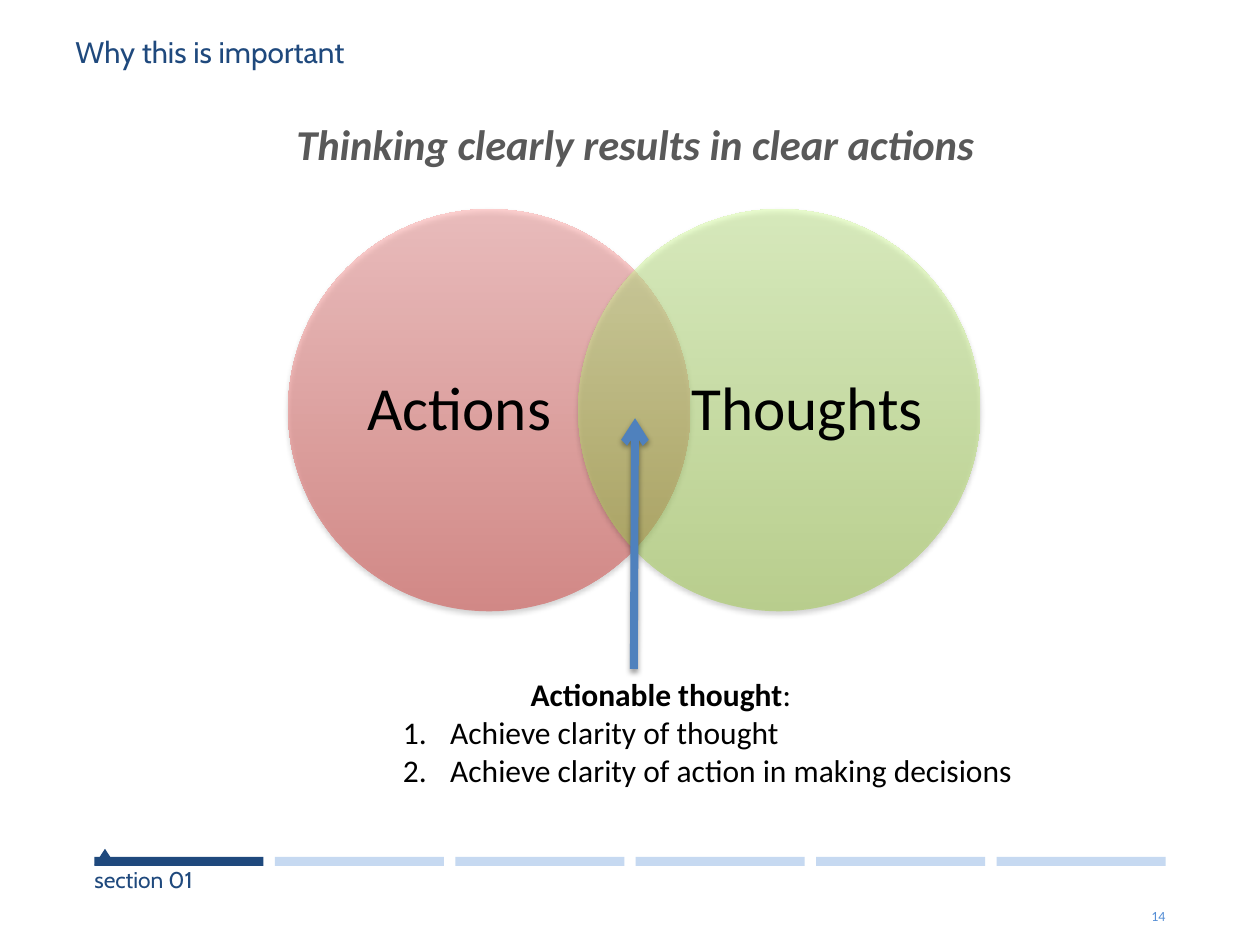
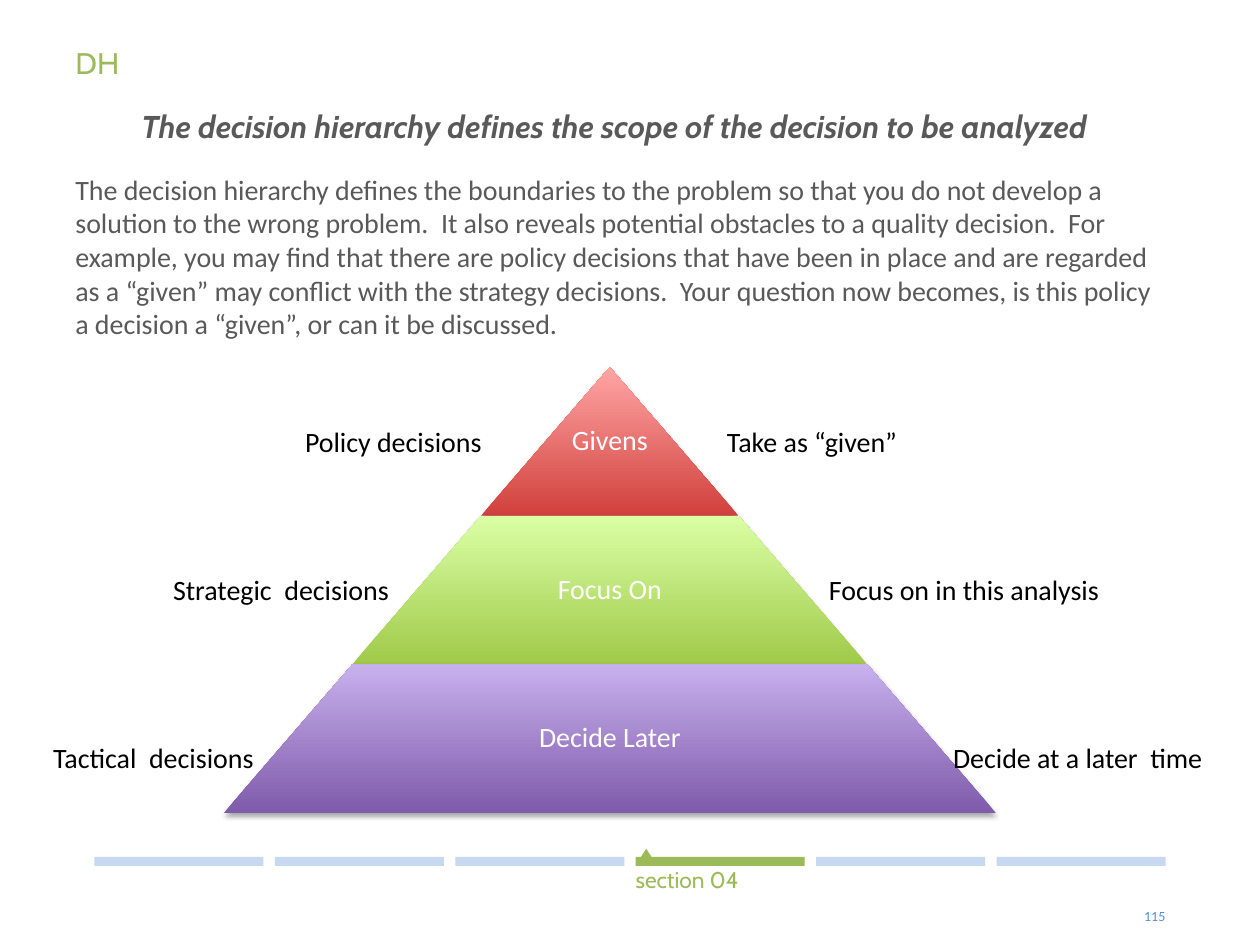
from lxml.etree import SubElement
from pptx import Presentation
from pptx.dml.color import RGBColor
from pptx.enum.shapes import MSO_CONNECTOR as Connector, MSO_SHAPE as Shape
from pptx.enum.text import MSO_ANCHOR as Anchor, PP_ALIGN as Align
from pptx.oxml.ns import qn
from pptx.util import Pt

NAVY, GREEN, PALE_BLUE = "1F497D", "9BBB59", "C6D9F1"
GREY, BLACK, WHITE = "595959", "000000", "FFFFFF"
RED_BLEND = ("D1403C", "FFA6A5")
GREEN_BLEND = ("A0CA4A", "DAFFA5")
PURPLE_BLEND = ("7F5BAB", "C8B0ED")

SECTIONS = 6
BAR_LEFT, BAR_TOP, BAR_WIDTH, BAR_HEIGHT, BAR_STEP = 54, 489.6, 96.6, 5.2, 103.1

KICKER = {"name": "Cabin", "size": Pt(17)}
SECTION = {"name": "Cabin", "size": Pt(13)}
HEADLINE = {"name": "Calibri", "size": Pt(24.3), "bold": True, "italic": True}
SUBHEAD = {"name": "Cabin", "size": Pt(18), "bold": True, "italic": True}
PAGE = {"name": "Calibri", "size": Pt(8)}
CIRCLE = {"name": "Calibri", "size": Pt(35)}
LIST = {"name": "Calibri", "size": Pt(18)}
PROSE = {"name": "Calibri", "size": Pt(16)}

TIGHT = {"margin_left": 0, "margin_right": 0, "margin_top": 0, "margin_bottom": 0}
MIDDLE = {"vertical_anchor": Anchor.MIDDLE}
CENTERED = {"alignment": Align.CENTER}
SQUEEZED = {"line_spacing": 0.85}


def rgb(color):
    return RGBColor.from_string(color)


def apply(target, values):
    for name, value in values.items():
        setattr(target, name, value)


def points(box):
    return [Pt(length) for length in box]


def write(paragraph, words, font, color, layout=None):
    apply(paragraph, layout or {})
    run = paragraph.add_run()
    run.text = words
    apply(run.font, font)
    run.font.color.rgb = rgb(color)


def add_text(slide, box, words, font, color, frame=None, layout=None):
    body = slide.shapes.add_textbox(*points(box)).text_frame
    body.word_wrap = True
    apply(body, frame or {})
    write(body.paragraphs[0], words, font, color, layout)
    return body


def add_shadow(properties, opacity, distance):
    effects = properties.find(qn("a:effectLst"))
    if effects is None:
        effects = SubElement(properties, qn("a:effectLst"))
    shade = SubElement(effects, qn("a:outerShdw"), blurRad=str(Pt(3.1)),
                       dist=str(Pt(distance)), dir="5400000", rotWithShape="0")
    black = SubElement(shade, qn("a:srgbClr"), val=BLACK)
    SubElement(black, qn("a:alpha"), val=str(opacity * 1000))


def paint(shape, color):
    shape.shadow.inherit = False
    shape.fill.solid()
    shape.fill.fore_color.rgb = rgb(color)
    shape.line.fill.background()


def add_blend(slide, kind, box, blend, opacity=100):
    shape = slide.shapes.add_shape(kind, *points(box))
    shape.shadow.inherit = False
    shape.line.fill.background()
    shape.fill.gradient()
    shape.fill.gradient_angle = 90
    for stop, color in zip(shape.fill.gradient_stops, blend):
        stop.color.rgb = rgb(color)
    properties = shape._element.spPr
    if opacity < 100:
        for color in properties.iter(qn("a:srgbClr")):
            SubElement(color, qn("a:alpha"), val=str(opacity * 1000))
    add_shadow(properties, 35, 1.8)
    return shape


def add_arrow(slide, start, end, color):
    arrow = slide.shapes.add_connector(Connector.STRAIGHT, *points(start + end))
    arrow.line.color.rgb = rgb(color)
    arrow.line.width = Pt(4.5)
    properties = arrow._element.spPr
    SubElement(properties.find(qn("a:ln")), qn("a:tailEnd"), type="arrow")
    add_shadow(properties, 38, 1.6)


def indent(paragraph, left, numbered=False):
    layout = paragraph._p.get_or_add_pPr()
    layout.set("marL", str(Pt(left)))
    layout.set("indent", str(Pt(-left if numbered else 0)))
    if numbered:
        SubElement(layout, qn("a:buFont"), typeface="+mj-lt")
        SubElement(layout, qn("a:buAutoNum"), type="arabicPeriod")


def add_progress(slide, current, color):
    for section in range(1, SECTIONS + 1):
        left = BAR_LEFT + (section - 1) * BAR_STEP
        bar = slide.shapes.add_shape(
            Shape.RECTANGLE, *points((left, BAR_TOP, BAR_WIDTH, BAR_HEIGHT)))
        paint(bar, color if section == current else PALE_BLUE)
    left = BAR_LEFT + (current - 1) * BAR_STEP
    base = BAR_TOP + 4.6
    outline = slide.shapes.build_freeform(Pt(left), Pt(base))
    outline.add_line_segments([points((left + 6, base - 9.2)), points((left + 12, base))])
    paint(outline.convert_to_shape(), color)
    add_text(slide, (left, 495, BAR_WIDTH, 16), f"section {current:02}",
             SECTION, color, TIGHT)


def add_page(deck, number, section, color):
    slide = deck.slides.add_slide(deck.slide_layouts[6])
    add_progress(slide, section, color)
    add_text(slide, (643, 519, 23, 9.4), str(number), PAGE, "558ED5",
             TIGHT | {"vertical_anchor": Anchor.BOTTOM}, {"alignment": Align.RIGHT})
    return slide


def build_importance(deck):
    slide = add_page(deck, 14, 1, NAVY)
    add_text(slide, (36, 18.7, 612, 35), "Why this is important", KICKER, NAVY,
             layout=SQUEEZED)
    add_text(slide, (39, 62, 648, 40), "Thinking clearly results in clear actions",
             HEADLINE, GREY, MIDDLE, CENTERED)
    for name, left, label_left, blend in (("Actions", 164.6, 196.2, RED_BLEND),
                                          ("Thoughts", 330.4, 395, GREEN_BLEND)):
        add_blend(slide, Shape.OVAL, (left, 119.5, 229.8, 229.8), blend, 50)
        add_text(slide, (label_left, 147, 132.5, 175.5), name, CIRCLE, BLACK,
                 TIGHT | MIDDLE, CENTERED | {"line_spacing": 0.9})

    goals = add_text(slide, (223.2, 382.3, 460.8, 72.7), "Actionable thought",
                     LIST | {"bold": True}, BLACK)
    write(goals.paragraphs[0], ":", LIST, BLACK)
    indent(goals.paragraphs[0], 73)
    for goal in ("Achieve clarity of thought",
                 "Achieve clarity of action in making decisions"):
        item = goals.add_paragraph()
        indent(item, 27, numbered=True)
        write(item, goal, LIST, BLACK)
    add_arrow(slide, (362.2, 382.3), (362.9, 239), "4F81BD")


def build_hierarchy(deck):
    slide = add_page(deck, 115, 4, GREEN)
    heading = add_text(slide, (36, 25.2, 630, 76.3), "DH", KICKER, GREEN,
                       layout=SQUEEZED)
    write(heading.add_paragraph(),
          "The decision hierarchy defines the scope of the decision to be analyzed",
          SUBHEAD, GREY, CENTERED | SQUEEZED | {"space_before": Pt(18.5)})
    add_text(slide, (36, 95, 640, 126),
             "The decision hierarchy defines the boundaries to the problem so that you "
             "do not develop a solution to the wrong problem.  It also reveals potential "
             "obstacles to a quality decision.  For example, you may find that there are "
             "policy decisions that have been in place and are regarded as a “given” may "
             "conflict with the strategy decisions.  Your question now becomes, is this "
             "policy a decision a “given”, or can it be discussed.", PROSE, GREY)

    center, top, height, slope = 348.5, 209.8, 84.9, 73.5
    tiers = (("Givens", RED_BLEND), ("Focus On", GREEN_BLEND),
             ("Decide Later", PURPLE_BLEND))
    for row, (name, blend) in enumerate(tiers):
        reach = slope * (row + 1)
        box = (center - reach, top + row * height, 2 * reach, height)
        tier = add_blend(slide, Shape.TRAPEZOID, box, blend)
        tier.adjustments[0] = slope / height
        add_text(slide, box, name, PROSE, WHITE, TIGHT | MIDDLE,
                 CENTERED | {"line_spacing": 0.9})

    notes = ((252, (174.3, "Policy decisions"), (415.4, "Take as “given”")),
             (336.6, (98.9, "Strategic  decisions"), (473.7, "Focus on in this analysis")),
             (432.6, (30.3, "Tactical  decisions"), (544.6, "Decide at a later  time")))
    for middle, *sides in notes:
        for left, words in sides:
            add_text(slide, (left, middle - 10, 165, 20), words, PROSE, BLACK,
                     TIGHT | MIDDLE)


def main():
    deck = Presentation()
    deck.slide_width, deck.slide_height = Pt(720), Pt(540)
    build_importance(deck)
    build_hierarchy(deck)
    deck.save("out.pptx")


if __name__ == "__main__":
    main()
